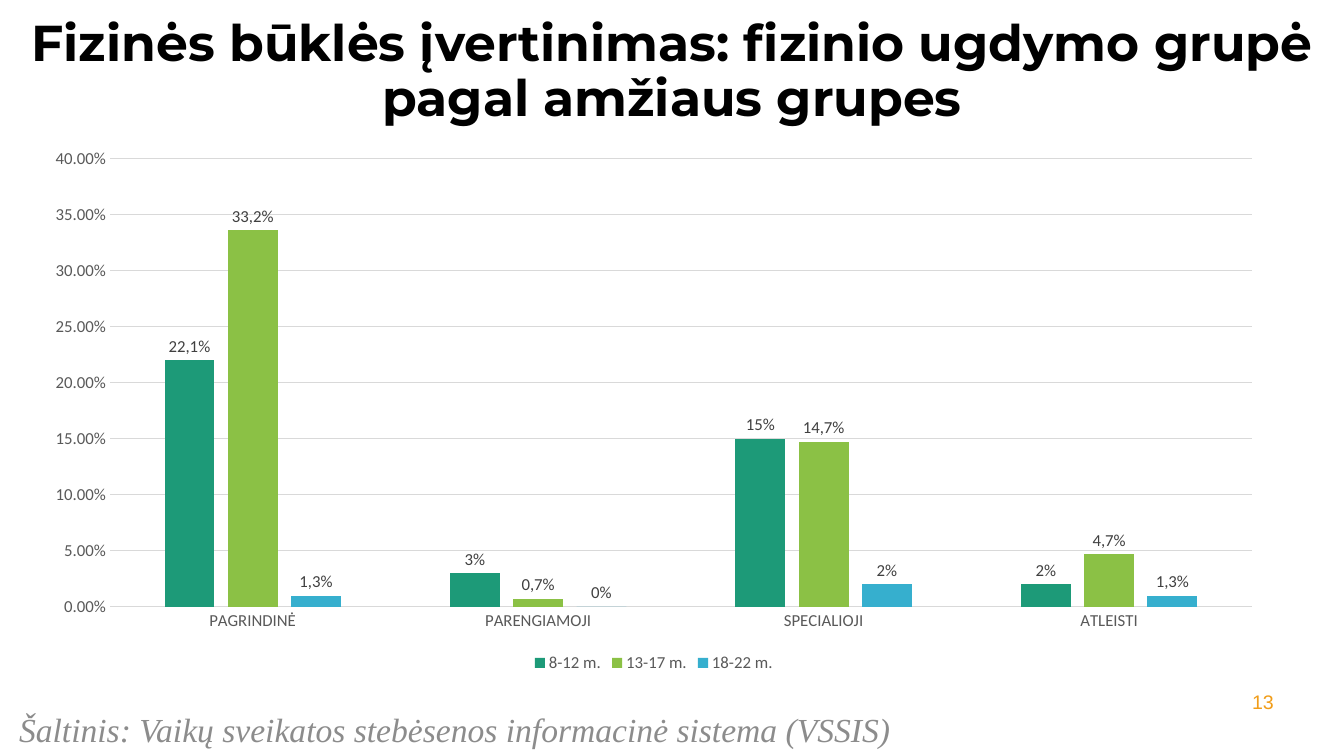
from pptx import Presentation
from pptx.chart.data import CategoryChartData
from pptx.dml.color import RGBColor
from pptx.enum import chart as charts, text as texts
from pptx.util import Pt

BLACK = RGBColor(0x00, 0x00, 0x00)
GREY = RGBColor(0x8C, 0x8C, 0x8C)
ORANGE = RGBColor(0xF1, 0x9D, 0x19)
AXIS_TEXT = RGBColor(0x59, 0x59, 0x59)
LABEL_TEXT = RGBColor(0x40, 0x40, 0x40)
GRID = RGBColor(0xD9, 0xD9, 0xD9)
GREEN = RGBColor(0x1D, 0x9A, 0x78)
LIME = RGBColor(0x8B, 0xC1, 0x45)
BLUE = RGBColor(0x36, 0xAF, 0xCE)

GROUPS = ["PAGRINDINĖ", "PARENGIAMOJI", "SPECIALIOJI", "ATLEISTI"]
AGES = [
    ("8-12 m.", GREEN, "0%", [0.22, 0.03, 0.15, 0.02], {0: "22,1%", 2: "15%"}),
    ("13-17 m.", LIME, "0.00%", [0.336, 0.007, 0.147, 0.047],
     {0: "33,2%", 1: "0,7%", 2: "14,7%", 3: "4,7%"}),
    ("18-22 m.", BLUE, "0%", [0.01, 0, 0.02, 0.01], {0: "1,3%", 2: "2%", 3: "1,3%"}),
]


def style_font(font, name, size, color, bold=False, italic=False):
    font.name = name
    font.size = Pt(size)
    font.color.rgb = color
    font.bold = bold
    font.italic = italic


def add_text(slide, content, box, *, align=texts.PP_ALIGN.LEFT,
             anchor=texts.MSO_ANCHOR.TOP, spacing=1.0, **font_format):
    shape = slide.shapes.add_textbox(*map(Pt, box))
    frame = shape.text_frame
    frame.word_wrap = True
    frame.vertical_anchor = anchor
    paragraph = frame.paragraphs[0]
    paragraph.alignment = align
    paragraph.line_spacing = spacing
    run = paragraph.add_run()
    run.text = content
    style_font(run.font, **font_format)


def style_line(line, color):
    line.color.rgb = color
    line.width = Pt(0.75)


def style_axes(chart):
    for axis in (chart.category_axis, chart.value_axis):
        axis.major_tick_mark = charts.XL_TICK_MARK.NONE
        axis.minor_tick_mark = charts.XL_TICK_MARK.NONE
        style_font(axis.tick_labels.font, "Calibri", 12, AXIS_TEXT)
    style_line(chart.category_axis.format.line, GRID)
    value_axis = chart.value_axis
    value_axis.format.line.fill.background()
    style_line(value_axis.major_gridlines.format.line, GRID)
    value_axis.minimum_scale = 0
    value_axis.maximum_scale = 0.4
    value_axis.major_unit = 0.05
    value_axis.tick_labels.number_format = "0.00%"
    value_axis.tick_labels.number_format_is_linked = False


def style_series(series, color, number_format, point_labels):
    series.format.fill.solid()
    series.format.fill.fore_color.rgb = color
    series.invert_if_negative = False
    data_labels = series.data_labels
    data_labels.show_value = True
    data_labels.number_format = number_format
    data_labels.number_format_is_linked = False
    data_labels.position = charts.XL_LABEL_POSITION.OUTSIDE_END
    style_font(data_labels.font, "Calibri", 12, LABEL_TEXT)
    for index, label in point_labels.items():
        data_label = series.points[index].data_label
        run = data_label.text_frame.paragraphs[0].add_run()
        run.text = label
        style_font(run.font, "Calibri", 12, LABEL_TEXT)
        data_label.position = charts.XL_LABEL_POSITION.OUTSIDE_END


def add_column_chart(slide, box):
    data = CategoryChartData()
    data.categories = GROUPS
    for name, _, number_format, values, _ in AGES:
        data.add_series(name, values, number_format)
    chart = slide.shapes.add_chart(
        charts.XL_CHART_TYPE.COLUMN_CLUSTERED, *map(Pt, box), data).chart
    chart.has_title = False
    style_font(chart.font, "Calibri", 10, BLACK)
    style_axes(chart)
    chart.has_legend = True
    chart.legend.position = charts.XL_LEGEND_POSITION.BOTTOM
    chart.legend.include_in_layout = False
    style_font(chart.legend.font, "Calibri", 12, AXIS_TEXT)
    plot = chart.plots[0]
    plot.gap_width = 219
    plot.overlap = -27
    plot.vary_by_categories = False
    for series, (_, color, number_format, _, point_labels) in zip(plot.series, AGES):
        style_series(series, color, number_format, point_labels)


def main():
    presentation = Presentation()
    presentation.slide_width = Pt(960)
    presentation.slide_height = Pt(540)
    slide = presentation.slides.add_slide(presentation.slide_layouts[6])
    add_text(slide, "Fizinės būklės įvertinimas: fizinio ugdymo grupė pagal amžiaus grupes",
             (0, 0, 960, 104), align=texts.PP_ALIGN.CENTER, anchor=texts.MSO_ANCHOR.MIDDLE,
             spacing=0.9, name="Montserrat", size=36, color=BLACK, bold=True)
    add_text(slide, "Šaltinis: Vaikų sveikatos stebėsenos informacinė sistema (VSSIS)",
             (6.5, 502.5, 646, 27.5), name="Times New Roman", size=24, color=GREY, italic=True)
    add_text(slide, "13", (879.5, 487, 37.5, 29), align=texts.PP_ALIGN.RIGHT,
             anchor=texts.MSO_ANCHOR.MIDDLE, name="Arial", size=14, color=ORANGE)
    add_column_chart(slide, (22, 98.5, 890, 385))
    presentation.save("out.pptx")


if __name__ == "__main__":
    main()
